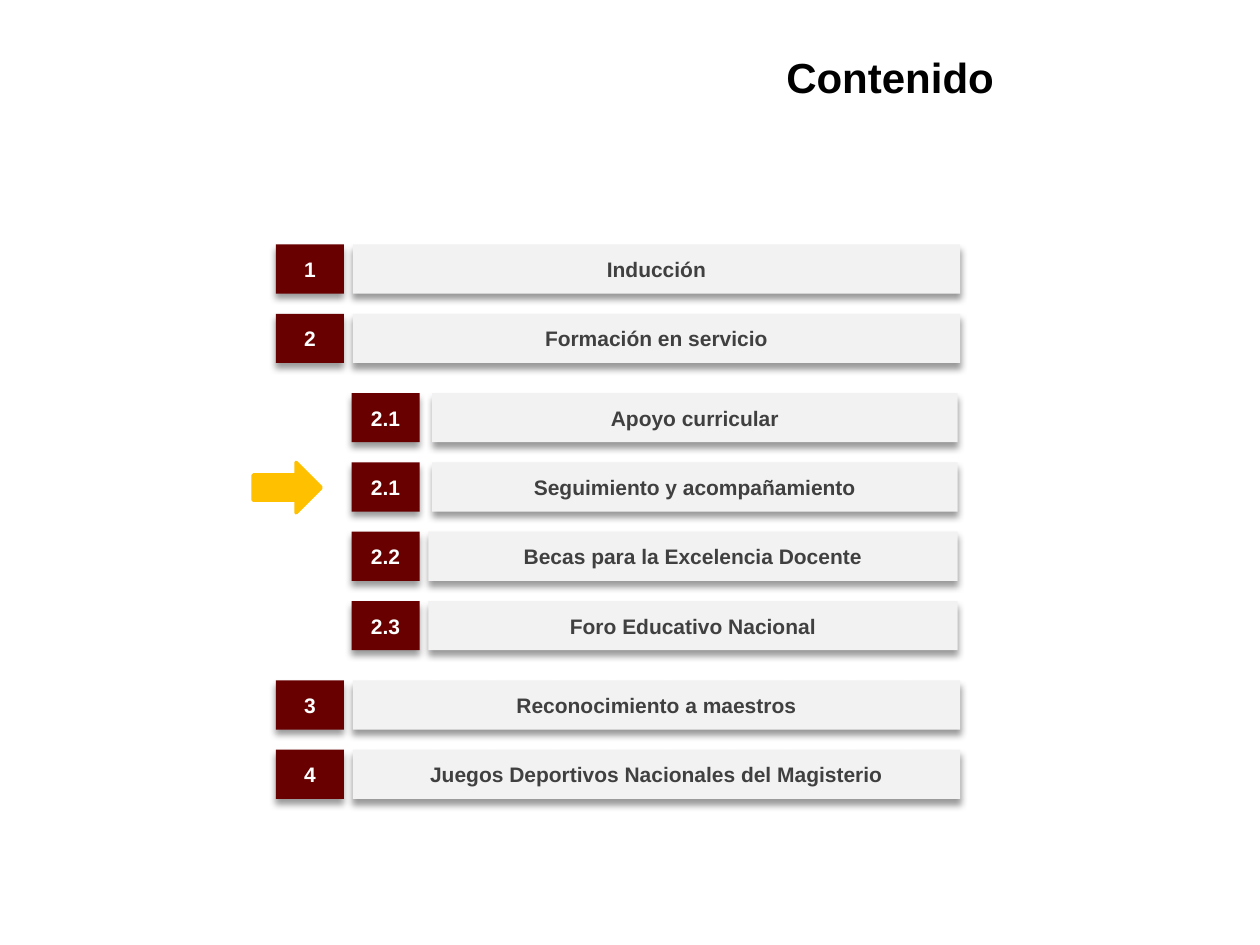
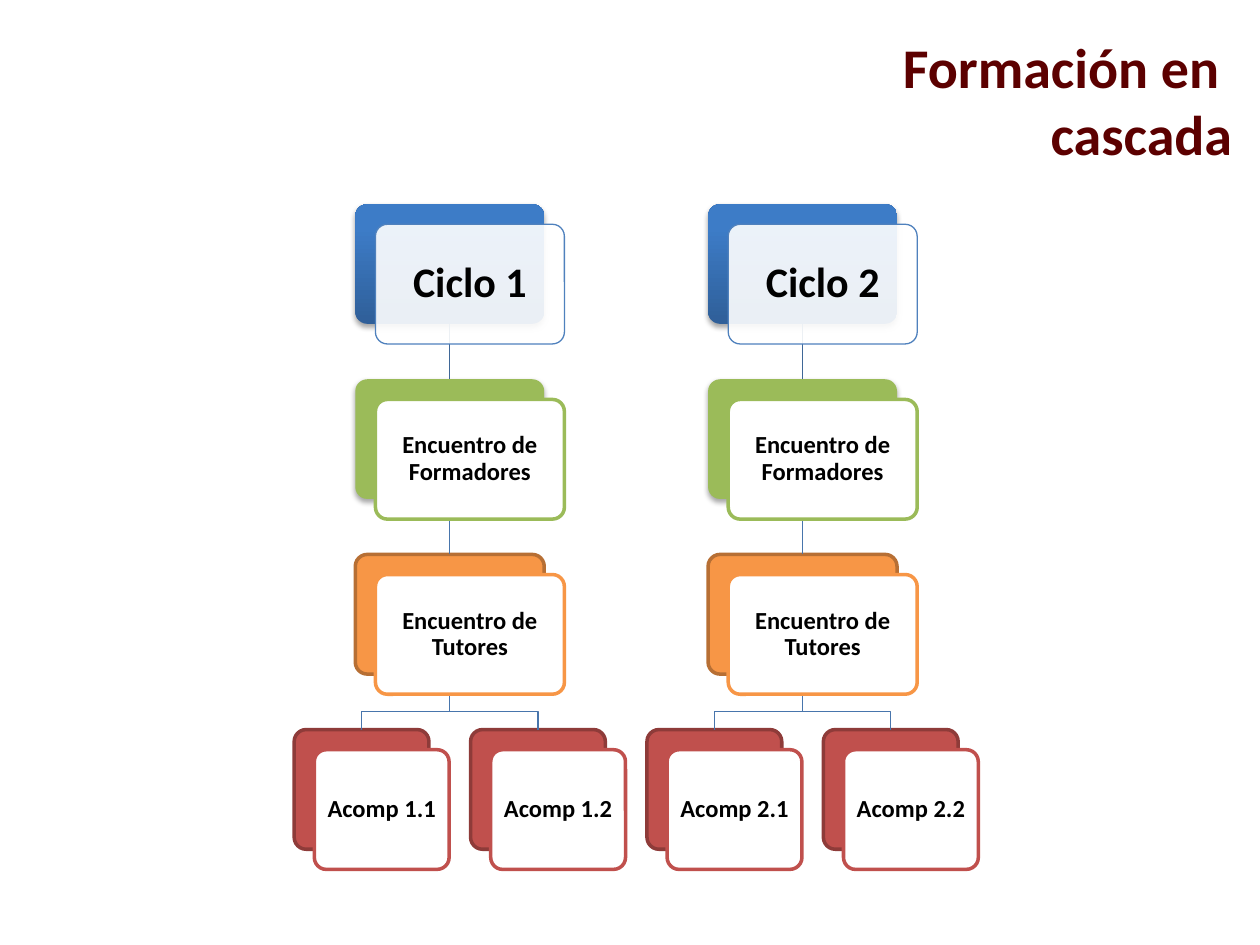
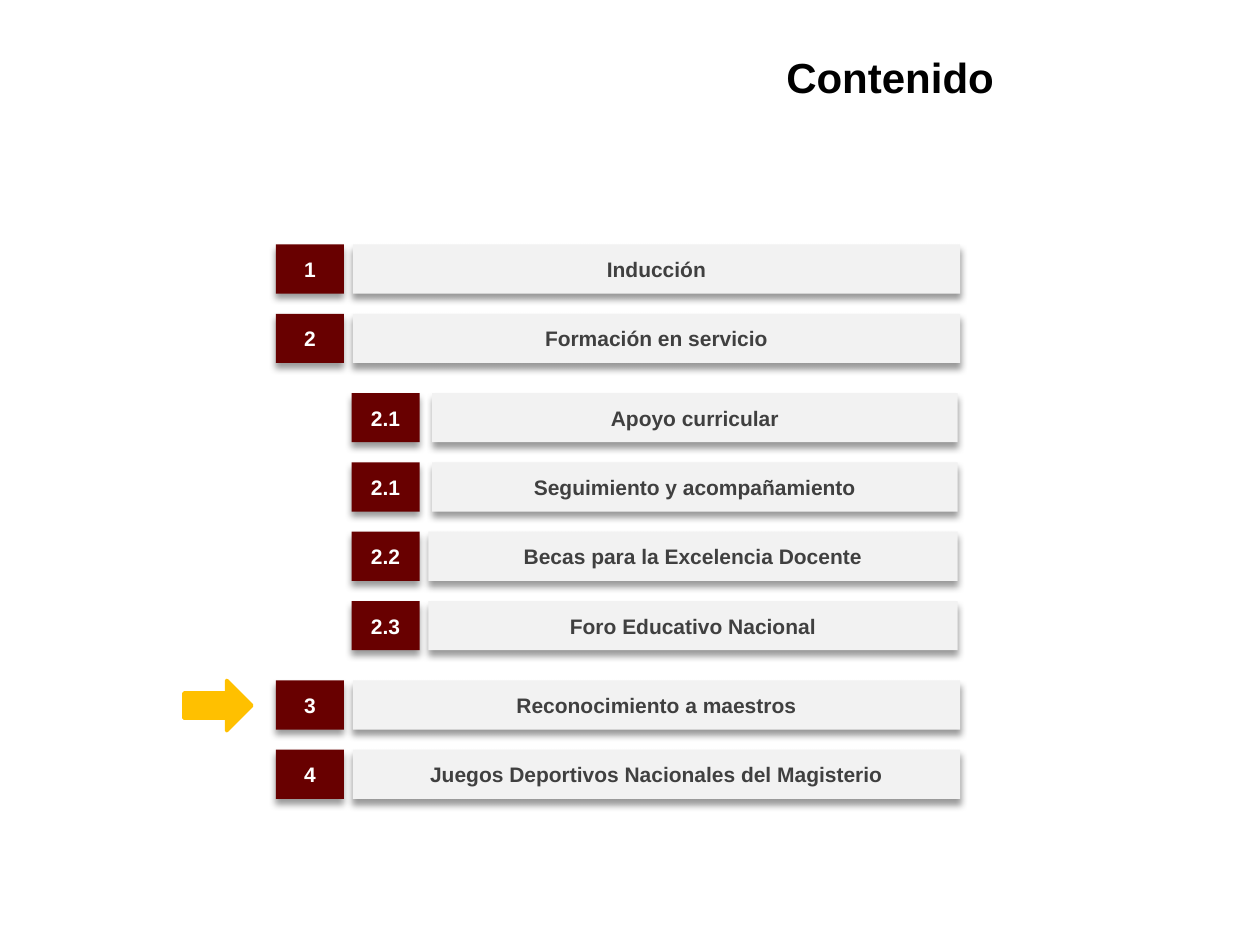
"""Build three slides on teacher training: two agenda views and a cascade diagram."""
from dataclasses import dataclass

from lxml.etree import SubElement
from pptx import Presentation
from pptx.dml.color import RGBColor
from pptx.enum.shapes import MSO_CONNECTOR, MSO_SHAPE
from pptx.enum.text import MSO_ANCHOR, MSO_AUTO_SIZE, PP_ALIGN
from pptx.oxml.ns import qn
from pptx.util import Inches, Pt

AGENDA_TITLE = "Contenido"
AGENDA = [
    ("1", "Inducción", 1, 2.8),
    ("2", "Formación en servicio", 1, 2.8),
    ("2.1", "Apoyo curricular", 2, 3.43),
    ("2.1", "Seguimiento y acompañamiento", 2, 3.43),
    ("2.2", "Becas para la Excelencia Docente", 2, 3.4),
    ("2.3", "Foro Educativo Nacional", 2, 3.4),
    ("3", "Reconocimiento a maestros", 1, 2.8),
    ("4", "Juegos Deportivos Nacionales del Magisterio", 1, 2.8),
]
NUMBER_LEFT = {1: 2.19, 2: 2.79}
LABEL_RIGHT = {1: 7.62, 2: 7.6}
AGENDA_TOP, ROW_PITCH, LEVEL_GAP = 1.94, 0.55, 0.08
NUMBER_WIDTH, ROW_HEIGHT = 0.54, 0.39

CASCADE_TITLE = "Formación en \vcascada"
CYCLES = [
    ("Ciclo 1", ["Acomp 1.1", "Acomp 1.2"]),
    ("Ciclo 2", ["Acomp 2.1", "Acomp 2.2"]),
]
MEETINGS = ["Encuentro de Formadores", "Encuentro de Tutores"]
FIRST_CENTER, CYCLE_PITCH, LEAF_PITCH = 3.57, 2.8, 1.4
CASCADE_TOP, LEVEL_PITCH = 1.62, 1.39
CARD_WIDTH, LEAF_WIDTH, CARD_HEIGHT = 1.5, 1.07, 0.95
CARD_OFFSET, BRANCH_DROP = 0.16, 0.3


@dataclass(frozen=True)
class Theme:
    """Hold the colours, fonts and type sizes of the slides."""
    black: str = "000000"
    white: str = "FFFFFF"
    maroon: str = "680000"
    dark_maroon: str = "5C0000"
    gray: str = "F2F2F2"
    dark_gray: str = "404040"
    amber: str = "FFC000"
    blue: str = "4F81BD"
    blue_gradient: tuple = ((0, "2F5F99"), (0.8, "3D7CC7"))
    first_link: str = "3F6797"
    link: str = "4875AC"
    agenda_font: str = "Arial"
    cascade_font: str = "Calibri"
    agenda_title_size: int = 24
    cascade_title_size: int = 32
    agenda_size: int = 12
    cycle_size: int = 24
    card_size: int = 14


THEME = Theme()
AGENDA_SHADOW = (40, 4, 3)
CARD_SHADOW = (35, 3.1, 1.8)
LEVELS = [
    dict(back=THEME.blue_gradient, front_line=THEME.blue, front_width=0.75,
         front_alpha=90, shadow=CARD_SHADOW, size=THEME.cycle_size, inset=0.1),
    dict(back="9BBB59", front_line="9BBB59", shadow=CARD_SHADOW),
    dict(back="F79646", back_line="B76F34", front_line="F79646"),
    dict(back="C0504D", back_line="8E3B39", front_line="C0504D"),
]


def rgb(color):
    """Turn a hexadecimal string into a colour."""
    return RGBColor.from_string(color)


def set_text(shape, text, *, font, size, color, align=PP_ALIGN.CENTER,
             anchor=MSO_ANCHOR.MIDDLE, inset=None, spacing=None):
    """Write bold text into a shape with the given format."""
    frame = shape.text_frame
    frame.word_wrap = True
    frame.auto_size = MSO_AUTO_SIZE.NONE
    frame.vertical_anchor = anchor
    if inset is not None:
        frame.margin_left = frame.margin_right = Inches(inset)
        frame.margin_top = frame.margin_bottom = Inches(inset)
    paragraph = frame.paragraphs[0]
    paragraph.text = text
    paragraph.alignment = align
    if spacing:
        paragraph.line_spacing = spacing
    for run in paragraph.runs:
        run.font.name, run.font.size, run.font.bold = font, Pt(size), True
        run.font.color.rgb = rgb(color)


def add_shadow(shape, alpha, blur, distance):
    """Give a shape a soft black shadow falling downwards."""
    effects = shape.element.spPr.find(qn("a:effectLst"))
    shadow = SubElement(effects, qn("a:outerShdw"), blurRad=str(Pt(blur)),
                        dist=str(Pt(distance)), dir="5400000", rotWithShape="0")
    color = SubElement(shadow, qn("a:srgbClr"), val=THEME.black)
    SubElement(color, qn("a:alpha"), val=str(alpha * 1000))


def add_box(slide, kind, left, top, width, height, fill, *, line=None,
            line_width=2, shadow=None, alpha=None):
    """Add a filled preset shape; a tuple of stops makes a vertical gradient."""
    shape = slide.shapes.add_shape(kind, *map(Inches, (left, top, width, height)))
    shape.shadow.inherit = False
    if isinstance(fill, tuple):
        shape.fill.gradient()
        shape.fill.gradient_angle = 90
        for stop, (position, color) in zip(shape.fill.gradient_stops, fill):
            stop.position, stop.color.rgb = position, rgb(color)
    else:
        shape.fill.solid()
        shape.fill.fore_color.rgb = rgb(fill)
    if alpha:
        color = shape.element.spPr.find(f"{qn('a:solidFill')}/{qn('a:srgbClr')}")
        SubElement(color, qn("a:alpha"), val=str(alpha * 1000))
    if line:
        shape.line.color.rgb, shape.line.width = rgb(line), Pt(line_width)
    else:
        shape.line.fill.background()
    if shadow:
        add_shadow(shape, *shadow)
    return shape


def add_titled_slide(presentation, title, left, top, width, height, **text_format):
    """Add a slide and place its title."""
    slide = presentation.slides.add_slide(presentation.slide_layouts[5])
    shape = slide.shapes.title
    shape.left, shape.top, shape.width, shape.height = map(
        Inches, (left, top, width, height))
    set_text(shape, title, anchor=MSO_ANCHOR.TOP, **text_format)
    return slide


def add_agenda(presentation, current, arrow_left):
    """Add the agenda slide with an arrow beside the current row."""
    slide = add_titled_slide(
        presentation, AGENDA_TITLE, 6.14, 0.36, 3.86, 0.5, font=THEME.agenda_font,
        size=THEME.agenda_title_size, color=THEME.black, align=PP_ALIGN.LEFT)
    top, previous_level = AGENDA_TOP, AGENDA[0][2]
    for index, (number, label, level, label_left) in enumerate(AGENDA):
        if level != previous_level:
            top += LEVEL_GAP
        previous_level = level
        cells = [
            (label, label_left, LABEL_RIGHT[level] - label_left, THEME.gray,
             THEME.dark_gray),
            (number, NUMBER_LEFT[level], NUMBER_WIDTH, THEME.maroon, THEME.white),
        ]
        for text, left, width, fill, color in cells:
            cell = add_box(slide, MSO_SHAPE.RECTANGLE, left, top, width, ROW_HEIGHT,
                           fill, shadow=AGENDA_SHADOW)
            set_text(cell, text, font=THEME.agenda_font, size=THEME.agenda_size,
                     color=color)
        if index == current:
            add_box(slide, MSO_SHAPE.RIGHT_ARROW, arrow_left, top, 0.54, 0.4,
                    THEME.amber, line=THEME.amber)
        top += ROW_PITCH


def add_card(slide, level, center, width, offset=0):
    """Add a rounded card: the coloured back one, or the white one when offset."""
    style = LEVELS[level]
    if offset:
        look = dict(fill=THEME.white, line=style["front_line"],
                    line_width=style.get("front_width", 2),
                    alpha=style.get("front_alpha"))
    else:
        look = dict(fill=style["back"], line=style.get("back_line"),
                    shadow=style.get("shadow"))
    card = add_box(slide, MSO_SHAPE.ROUNDED_RECTANGLE, center - width / 2 + offset,
                   CASCADE_TOP + level * LEVEL_PITCH + offset, width, CARD_HEIGHT,
                   **look)
    card.adjustments[0] = 0.1
    return card


def add_link(slide, upper, lower, color):
    """Join two stacked cards with a straight connector."""
    link = slide.shapes.add_connector(MSO_CONNECTOR.STRAIGHT, 0, 0, 0, 0)
    link.begin_connect(upper, 2)
    link.end_connect(lower, 0)
    link.line.color.rgb, link.line.width = rgb(color), Pt(0.75)
    SubElement(link.element.spPr, qn("a:effectLst"))


def add_branch(slide, upper, lower):
    """Draw an elbow from the bottom of one card to the top of another."""
    start_x, start_y = upper.left + upper.width // 2, upper.top + upper.height
    end_x, bend_y = lower.left + lower.width // 2, start_y + Inches(BRANCH_DROP)
    builder = slide.shapes.build_freeform(start_x, start_y)
    builder.add_line_segments(
        [(start_x, bend_y), (end_x, bend_y), (end_x, lower.top)], close=False)
    branch = builder.convert_to_shape()
    branch.shadow.inherit = False
    branch.fill.background()
    branch.line.color.rgb, branch.line.width = rgb(THEME.link), Pt(0.75)


def add_cycle(slide, center, name, leaves):
    """Add one column of stacked cards with its leaves."""
    cards = [(level, center, CARD_WIDTH, text)
             for level, text in enumerate([name, *MEETINGS])]
    stack_size = len(cards)
    for index, text in enumerate(leaves):
        shift = (index - (len(leaves) - 1) / 2) * LEAF_PITCH
        cards.append((stack_size, center + shift, LEAF_WIDTH, text))
    backs = [add_card(slide, level, middle, width)
             for level, middle, width, _ in cards]
    stack = backs[:stack_size]
    for index, (upper, lower) in enumerate(zip(stack, stack[1:])):
        add_link(slide, upper, lower, THEME.link if index else THEME.first_link)
    for leaf in backs[stack_size:]:
        add_branch(slide, stack[-1], leaf)
    for level, middle, width, text in cards:
        style = LEVELS[level]
        front = add_card(slide, level, middle, width, CARD_OFFSET)
        set_text(front, text, font=THEME.cascade_font, color=THEME.black,
                 size=style.get("size", THEME.card_size),
                 inset=style.get("inset", 0.06), spacing=0.9)


def add_cascade(presentation):
    """Add the cascade diagram slide."""
    slide = add_titled_slide(
        presentation, CASCADE_TITLE, 5.79, 0.21, 4.09, 1.1, font=THEME.cascade_font,
        size=THEME.cascade_title_size, color=THEME.dark_maroon, align=PP_ALIGN.RIGHT)
    for index, (name, leaves) in enumerate(CYCLES):
        add_cycle(slide, FIRST_CENTER + index * CYCLE_PITCH, name, leaves)


def main():
    """Build and save the presentation."""
    presentation = Presentation()
    presentation.slide_width, presentation.slide_height = Inches(10), Inches(7.5)
    add_agenda(presentation, current=3, arrow_left=2.01)
    add_cascade(presentation)
    add_agenda(presentation, current=6, arrow_left=1.46)
    presentation.save("out.pptx")


if __name__ == "__main__":
    main()
